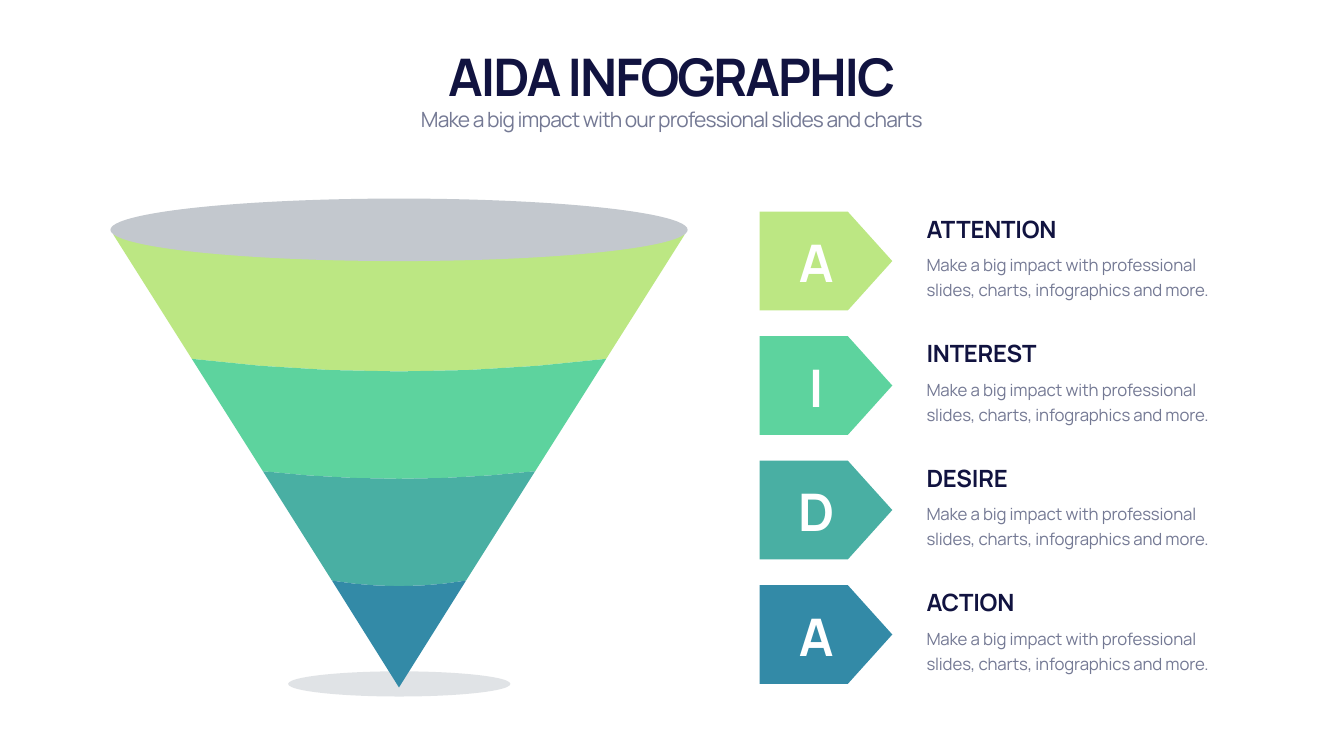
from itertools import pairwise

from pptx import Presentation
from pptx.dml.color import RGBColor
from pptx.enum.shapes import MSO_SHAPE
from pptx.enum.text import MSO_ANCHOR, MSO_AUTO_SIZE, PP_ALIGN
from pptx.oxml.ns import qn
from pptx.oxml.xmlchemy import OxmlElement
from pptx.util import Inches, Pt

NAVY = RGBColor(0x11, 0x13, 0x40)
SLATE = RGBColor(0x74, 0x79, 0x94)
GREY = RGBColor(0xC3, 0xC8, 0xCE)
WHITE = RGBColor(0xFF, 0xFF, 0xFF)
LIME = RGBColor(0xBC, 0xE7, 0x83)
GREEN = RGBColor(0x5D, 0xD3, 0x9E)
TEAL = RGBColor(0x49, 0xAF, 0xA3)
BLUE = RGBColor(0x33, 0x8A, 0xA7)

DETAIL = "Make a big impact with professional slides, charts, infographics and more."
STAGES = [("ATTENTION", LIME), ("INTEREST", GREEN), ("DESIRE", TEAL), ("ACTION", BLUE)]
RIMS = [(0.71, 5.67, 0), (3.18, 4.11, 0.25), (5.41, 2.7, 0.15), (7.58, 1.33, 0.11), (9.7, 0, 0)]
ROW_PITCH = 2.47
ARC_STEPS = 6


def paint(shape, color):
    """Give a shape a flat fill with no line or shadow."""
    shape.fill.solid()
    shape.fill.fore_color.rgb = color
    shape.line.fill.background()
    shape.shadow.inherit = False


def add_shape(page, kind, box, color):
    """Add a flat preset shape in the given box."""
    shape = page.shapes.add_shape(kind, *map(Inches, box))
    paint(shape, color)
    return shape


def add_text(page, box, text, size, color, spacing, bold=False,
             align=PP_ALIGN.LEFT, anchor=MSO_ANCHOR.TOP, leading=None):
    """Add a one-paragraph text box."""
    frame = page.shapes.add_textbox(*map(Inches, box)).text_frame
    frame.word_wrap = True
    frame.auto_size = MSO_AUTO_SIZE.SHAPE_TO_FIT_TEXT
    frame.vertical_anchor = anchor
    frame.text = text
    para = frame.paragraphs[0]
    para.alignment = align
    if leading:
        para.line_spacing = Pt(leading)
    span = para.runs[0]
    span.font.name = "Manrope"
    span.font.size = Pt(size)
    span.font.bold = bold
    span.font.color.rgb = color
    span._r.get_or_add_rPr().set("spc", str(round(spacing * 100)))


def add_heading(page, left, top, width):
    """Place the title and its subtitle."""
    add_text(page, (left, top, width, 1.35), "AIDA INFOGRAPHIC", 74, NAVY, -2.9,
             True, PP_ALIGN.CENTER, MSO_ANCHOR.BOTTOM)
    add_text(page, (left, top + 1.25, width, 0.61),
             "Make a big impact with our professional slides and charts",
             30, SLATE, -1.2, align=PP_ALIGN.CENTER)


def rim_points(center, top, rim):
    """Return the points of one rim, from left to right."""
    drop, half_width, sag = rim
    if not half_width:
        return [(Inches(center), Inches(top + drop))]
    count = ARC_STEPS if sag else 1
    steps = [2 * i / count - 1 for i in range(count + 1)]
    return [(Inches(center + half_width * t), Inches(top + drop + sag * (1 - t * t)))
            for t in steps]


def add_funnel(page, left, top, width):
    """Place the ground shadow, the four bands and the opening."""
    center = left + width / 2
    ground = add_shape(page, MSO_SHAPE.OVAL, (center - 2.2, top + 9.38, 4.41, 0.5), GREY)
    alpha = OxmlElement("a:alpha")
    alpha.set("val", "50000")
    next(ground._element.spPr.iter(qn("a:srgbClr"))).append(alpha)
    for (upper, lower), (_, color) in zip(pairwise(RIMS), STAGES):
        points = rim_points(center, top, upper) + rim_points(center, top, lower)[::-1]
        builder = page.shapes.build_freeform(*points[0])
        builder.add_line_segments(points[1:], close=True)
        paint(builder.convert_to_shape(), color)
    add_shape(page, MSO_SHAPE.OVAL, (left, top, width, 1.24), GREY)


def add_stage(page, left, top, name, color):
    """Place one arrow with its initial, heading and detail."""
    arrow = add_shape(page, MSO_SHAPE.PENTAGON, (left, top, 2.63, 1.96), color)
    arrow.adjustments[0] = 0.45
    add_text(page, (left + 0.35, top + 0.32, 1.54, 1.35), name[0], 74, WHITE, -2.9,
             True, PP_ALIGN.CENTER, MSO_ANCHOR.MIDDLE)
    add_text(page, (left + 3.21, top, 6.38, 0.67), name, 34, NAVY, -0.3,
             True, anchor=MSO_ANCHOR.BOTTOM)
    add_text(page, (left + 3.21, top + 0.71, 6.38, 1.09), DETAIL, 24, SLATE, -0.2,
             leading=36)


def main():
    """Build and save the deck."""
    deck = Presentation()
    deck.slide_width, deck.slide_height = Inches(26.66), Inches(15)
    page = deck.slides.add_slide(deck.slide_layouts[6])
    add_funnel(page, 2.19, 3.94, 11.45)
    add_heading(page, 1.66, 0.82, 23.33)
    for row, (name, color) in enumerate(STAGES):
        add_stage(page, 15.07, 4.2 + row * ROW_PITCH, name, color)
    deck.save("out.pptx")


if __name__ == "__main__":
    main()
